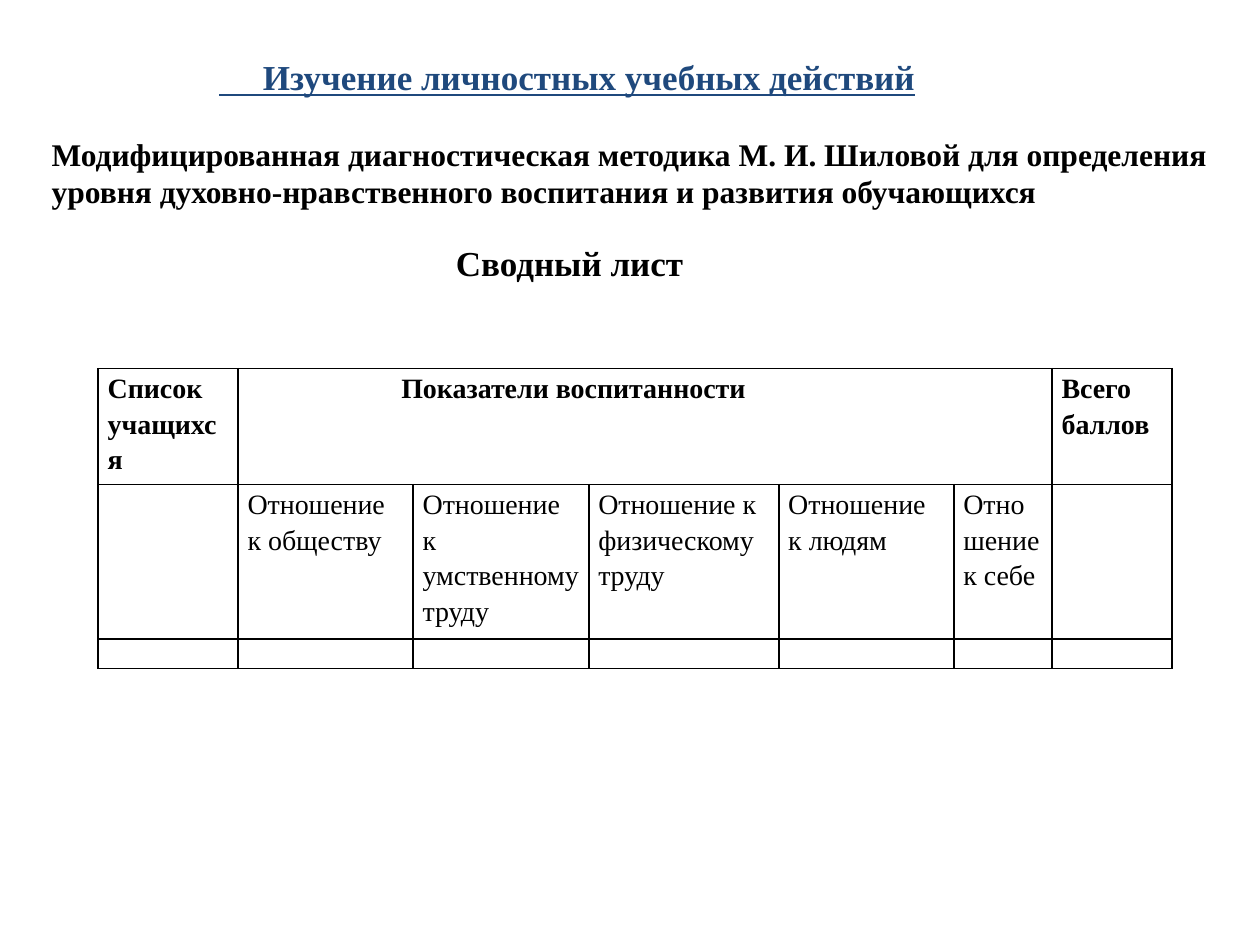
from lxml.etree import SubElement
from pptx import Presentation
from pptx.dml.color import RGBColor
from pptx.enum.text import MSO_ANCHOR, MSO_AUTO_SIZE
from pptx.oxml.ns import qn
from pptx.util import Cm, Pt

THEME = {
    "font": "Times New Roman",
    "ink": RGBColor(0, 0, 0),
    "accent": RGBColor(0x1F, 0x49, 0x7D),
    "paper": RGBColor(255, 255, 255),
    "heading": Pt(20),
    "lead": Pt(18),
    "cell": Pt(16),
    "empty": Pt(10),
    "border": Pt(1),
}

INK_BOLD = {"name": THEME["font"], "bold": True, "color": THEME["ink"]}
HEADING = INK_BOLD | {"size": THEME["heading"]}
TITLE = HEADING | {"underline": True, "color": THEME["accent"]}
LEAD = INK_BOLD | {"size": THEME["lead"]}
TABLE_HEAD = INK_BOLD | {"size": THEME["cell"]}
TABLE_BODY = TABLE_HEAD | {"bold": False}

HEADINGS = [
    (["     Изучение личностных учебных действий"], (4.17, 0.99, 14.66, 1.12), TITLE),
    (["Модифицированная диагностическая методика М. И. Шиловой для определения",
      "уровня духовно-нравственного воспитания и развития обучающихся"],
     (0.79, 2.59, 24.05, 1.8), LEAD),
    (["Сводный лист"], (8.94, 4.75, 5.13, 1.12), HEADING),
]

SUMMARY = [
    [["Список", "учащихся"], ["Показатели воспитанности"], [], [], [], [], ["Всего баллов"]],
    [[], ["Отношение", "к обществу"], ["Отношение к умственному труду"],
     ["Отношение к физическому труду"], ["Отношение к людям"], ["Отношение к себе"], []],
    [[] for _ in range(7)],
]
COLUMN_WIDTHS = [2.82, 3.53, 3.54, 3.83, 3.53, 1.98, 2.42]
ROW_HEIGHTS = [2.34, 3.1, 0.59]
TABLE_LEFT, TABLE_TOP = 1.98, 7.43
INDICATORS_INDENT = 3.1
CELL_FORMAT = {"margin_left": Cm(0.19), "margin_right": Cm(0.19),
               "margin_top": 0, "margin_bottom": 0}
FRAME_FORMAT = {"word_wrap": False, "auto_size": MSO_AUTO_SIZE.SHAPE_TO_FIT_TEXT}


def apply(target, values):
    for attribute, value in values.items():
        if attribute == "color":
            target.color.rgb = value
        else:
            setattr(target, attribute, value)


def write(frame, lines, style, spacing=None):
    for index, line in enumerate(lines):
        paragraph = frame.add_paragraph() if index else frame.paragraphs[0]
        if spacing:
            paragraph.line_spacing = spacing
        run = paragraph.add_run()
        run.text = line
        apply(run.font, style)


def add_borders(cell):
    properties = cell._tc.get_or_add_tcPr()
    for position, side in enumerate(("a:lnL", "a:lnR", "a:lnT", "a:lnB")):
        border = properties.makeelement(qn(side), {"w": str(THEME["border"])})
        properties.insert(position, border)
        fill = SubElement(border, qn("a:solidFill"))
        SubElement(fill, qn("a:srgbClr"), val=str(THEME["ink"]))


def add_heading(slide, lines, box, style):
    heading = slide.shapes.add_textbox(*map(Cm, box))
    apply(heading.text_frame, FRAME_FORMAT)
    if style is TITLE:
        heading.fill.solid()
        heading.fill.fore_color.rgb = THEME["paper"]
        heading.text_frame.vertical_anchor = MSO_ANCHOR.MIDDLE
    write(heading.text_frame, lines, style)


def add_summary(slide):
    summary = slide.shapes.add_table(
        len(SUMMARY), len(COLUMN_WIDTHS), Cm(TABLE_LEFT), Cm(TABLE_TOP),
        Cm(sum(COLUMN_WIDTHS)), Cm(sum(ROW_HEIGHTS))).table
    apply(summary, {"first_row": False, "horz_banding": False})
    for column, width in zip(summary.columns, COLUMN_WIDTHS):
        column.width = Cm(width)
    for row, height in zip(summary.rows, ROW_HEIGHTS):
        row.height = Cm(height)
    for r, entries in enumerate(SUMMARY):
        for c, lines in enumerate(entries):
            cell = summary.cell(r, c)
            apply(cell, CELL_FORMAT)
            cell.fill.background()
            add_borders(cell)
            write(cell.text_frame, lines, TABLE_BODY if r else TABLE_HEAD, 1.15)
            if not lines:
                SubElement(cell.text_frame.paragraphs[0]._p, qn("a:endParaRPr"),
                           sz=str(int(THEME["empty"].pt * 100)))
    indicators = summary.cell(0, 1)
    indicators.merge(summary.cell(0, 5))
    indicators.text_frame.paragraphs[0]._p.get_or_add_pPr().set(
        "marL", str(Cm(INDICATORS_INDENT)))


def main():
    presentation = Presentation()
    apply(presentation, {"slide_width": Cm(25.4), "slide_height": Cm(19.05)})
    slide = presentation.slides.add_slide(presentation.slide_layouts[6])
    for lines, box, style in HEADINGS:
        add_heading(slide, lines, box, style)
    add_summary(slide)
    presentation.save("out.pptx")


if __name__ == "__main__":
    main()
